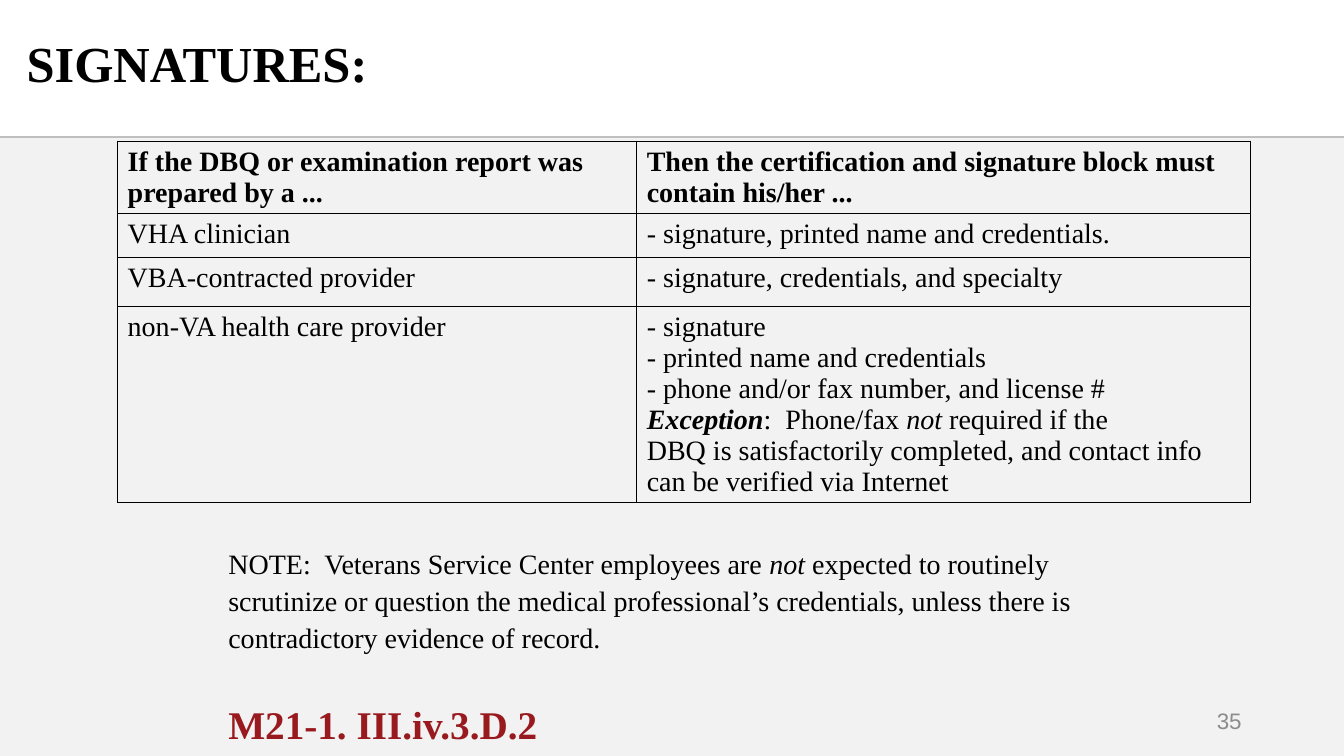
"""Build the slide on signature requirements for examination reports."""
from typing import NamedTuple

from lxml import etree
from pptx import Presentation
from pptx.dml.color import RGBColor
from pptx.enum.shapes import MSO_CONNECTOR, MSO_SHAPE
from pptx.enum.text import MSO_ANCHOR, PP_ALIGN
from pptx.oxml.ns import qn
from pptx.util import Inches, Pt

RECTANGLE = MSO_SHAPE.RECTANGLE
STRAIGHT = MSO_CONNECTOR.STRAIGHT
TOP, MIDDLE = MSO_ANCHOR.TOP, MSO_ANCHOR.MIDDLE
LEFT, RIGHT = PP_ALIGN.LEFT, PP_ALIGN.RIGHT

COLORS = {"text": "000000", "panel": "F2F2F2", "rule": "BFBFBF",
          "number": "8C8C8C", "reference": "991A1E"}
SERIF, SANS = "Times New Roman", "Arial"
COLUMNS, ROWS = 160, 90
WIDTH, HEIGHT = Inches(13.33), Inches(7.5)


class Span(NamedTuple):
    text: str
    bold: bool = False
    italic: bool = False


class Style(NamedTuple):
    size: int = 20
    color: str = "text"
    font: str = SERIF
    spacing: float = 1.0
    align: PP_ALIGN = LEFT


class Label(NamedTuple):
    column: float
    row: float
    columns: float
    rows: float
    spans: list[Span]
    style: Style
    anchor: MSO_ANCHOR = TOP
    wrap: bool = True


LABELS = [
    Label(113, 83.4, 36, 4.8, [Span("35")], Style(16, "number", SANS, align=RIGHT), MIDDLE),
    Label(2, 3.7, 120, 8.3, [Span("SIGNATURES:", bold=True)], Style(36, spacing=0.9), MIDDLE),
    Label(26, 64.1, 107, 13.3, [
        Span("NOTE:  Veterans Service Center employees are "),
        Span("not", italic=True),
        Span(" expected to routinely scrutinize or question the medical professional’s "
             "credentials, unless there is contradictory evidence of record."),
    ], Style(spacing=1.1)),
    Label(26, 82.2, 39.6, 6.8, [Span("M21-1. III.iv.3.D.2", bold=True)],
          Style(28, "reference", spacing=1.1), wrap=False),
]

TABLE_COLUMN, TABLE_ROW = 14, 16.8
COLUMN_SPANS = [61.8, 73.1]
ROW_SPANS = [8.6, 5.3, 5.75, 23.3]
CELLS = [
    [[[Span("If the DBQ or examination report was prepared by a ...", bold=True)]],
     [[Span("Then the certification and signature block must contain his/her ...", bold=True)]]],
    [[[Span("VHA clinician")]], [[Span("- signature, printed name and credentials.")]]],
    [[[Span("VBA-contracted provider")]], [[Span("- signature, credentials, and specialty")]]],
    [[[Span("non-VA health care provider")]],
     [[Span("- signature")],
      [Span("- printed name and credentials")],
      [Span("- phone and/or fax number, and license #")],
      [Span("Exception", bold=True, italic=True), Span(":  Phone/fax "),
       Span("not", italic=True), Span(" required if the")],
      [Span("DBQ is satisfactorily completed, and contact info can be verified via Internet")]]],
]


def across(columns: float) -> int:
    """Turn grid columns into a length."""
    return round(WIDTH * columns / COLUMNS)


def down(rows: float) -> int:
    """Turn grid rows into a length."""
    return round(HEIGHT * rows / ROWS)


def color(name: str) -> RGBColor:
    """Look up a colour by name."""
    return RGBColor.from_string(COLORS[name])


def write(frame, paragraphs: list[list[Span]], style: Style) -> None:
    """Fill a text frame run by run."""
    for index, spans in enumerate(paragraphs):
        para = frame.add_paragraph() if index else frame.paragraphs[0]
        para.alignment = style.align
        para.line_spacing = style.spacing
        for span in spans:
            run = para.add_run()
            run.text = span.text
            run.font.name = style.font
            run.font.size = Pt(style.size)
            run.font.bold = span.bold
            run.font.italic = span.italic
            run.font.color.rgb = color(style.color)


def add_background(page) -> None:
    """Draw the grey panel and the rule above it."""
    top = down(16.4)
    panel = page.shapes.add_shape(RECTANGLE, 0, top, WIDTH, HEIGHT - top)
    panel.shadow.inherit = False
    panel.fill.solid()
    panel.fill.fore_color.rgb = color("panel")
    panel.line.fill.background()
    level = down(16.3)
    rule = page.shapes.add_connector(STRAIGHT, 0, level, WIDTH, level)
    rule.line.color.rgb = color("rule")
    rule.line.width = Pt(1.5)
    etree.SubElement(rule._element.spPr, qn("a:effectLst"))


def add_label(page, label: Label) -> None:
    """Place one text box."""
    box = page.shapes.add_textbox(across(label.column), down(label.row),
                                  across(label.columns), down(label.rows))
    box.text_frame.word_wrap = label.wrap
    box.text_frame.vertical_anchor = label.anchor
    write(box.text_frame, [label.spans], label.style)


def add_borders(cell) -> None:
    """Outline a cell on all four sides."""
    properties = cell._tc.get_or_add_tcPr()
    for index, side in enumerate(("a:lnL", "a:lnR", "a:lnT", "a:lnB")):
        line = etree.Element(qn(side), w=str(Pt(1)))
        fill = etree.SubElement(line, qn("a:solidFill"))
        etree.SubElement(fill, qn("a:srgbClr"), val=COLORS["text"])
        properties.insert(index, line)


def add_signature_table(page) -> None:
    """Place the table of signature requirements."""
    table = page.shapes.add_table(
        len(ROW_SPANS), len(COLUMN_SPANS), across(TABLE_COLUMN), down(TABLE_ROW),
        across(sum(COLUMN_SPANS)), down(sum(ROW_SPANS))).table
    table.first_row = table.horz_banding = False
    for column, span in zip(table.columns, COLUMN_SPANS):
        column.width = across(span)
    for row, span, contents in zip(table.rows, ROW_SPANS, CELLS):
        row.height = down(span)
        for cell, paragraphs in zip(row.cells, contents):
            cell.fill.background()
            add_borders(cell)
            write(cell.text_frame, paragraphs, Style())


def main() -> None:
    """Build and save the deck."""
    deck = Presentation()
    deck.slide_width, deck.slide_height = WIDTH, HEIGHT
    page = deck.slides.add_slide(deck.slide_layouts[6])
    add_background(page)
    add_signature_table(page)
    for label in LABELS:
        add_label(page, label)
    deck.save("out.pptx")


if __name__ == "__main__":
    main()
